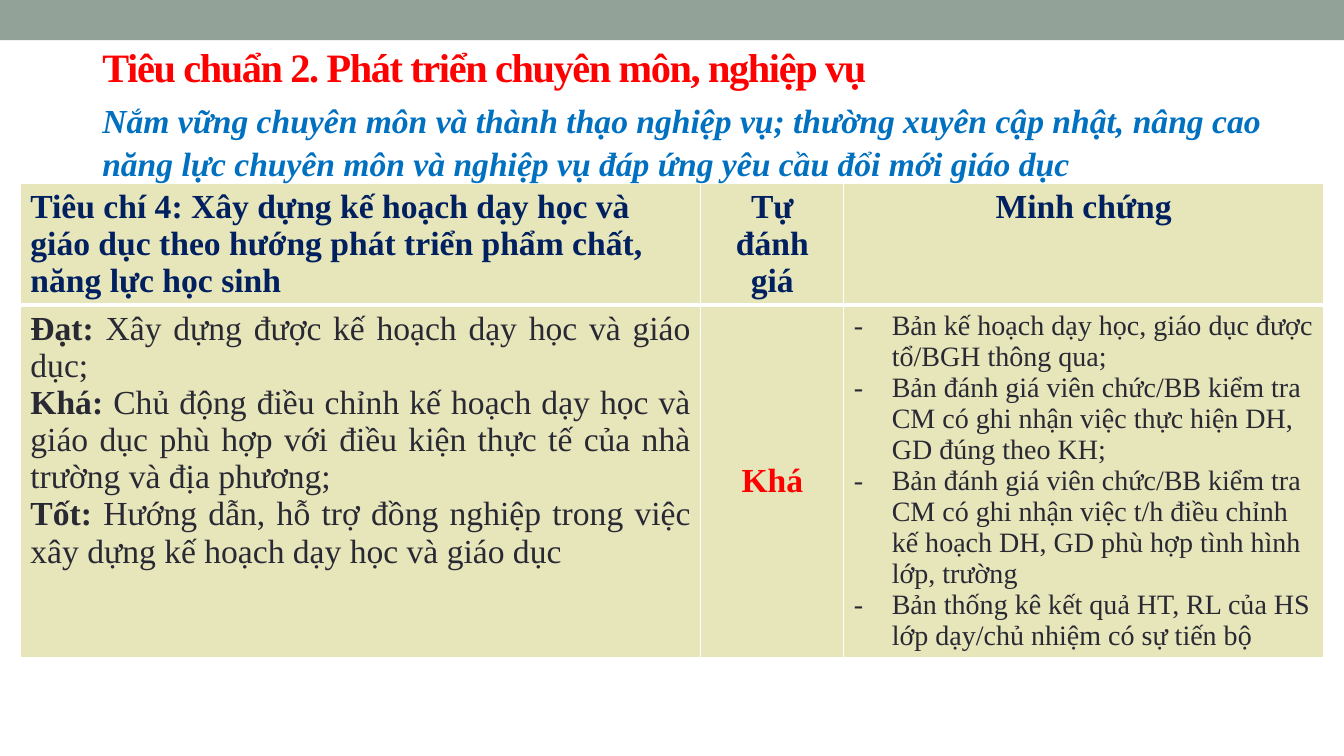
"""Build a slide on teaching criterion 4 with its levels, rating and evidence."""
from lxml.etree import SubElement
from pptx import Presentation
from pptx.dml.color import RGBColor
from pptx.enum.shapes import MSO_SHAPE
from pptx.enum.text import MSO_ANCHOR, PP_ALIGN
from pptx.oxml.ns import qn
from pptx.util import Pt

FONT = "Times New Roman"
NAVY, INK, RED, BLUE = "002060", "292934", "FF0000", "0070C0"
SAGE, CREAM, WHITE = "93A299", "E7E5BA", "FFFFFF"

CRITERION = ("Tiêu chí 4: Xây dựng kế hoạch dạy học và giáo dục theo hướng "
             "phát triển phẩm chất, năng lực học sinh")
LEVELS = [
    ("Đạt: ", "Xây dựng được kế hoạch dạy học và giáo dục;"),
    ("Khá: ", "Chủ động điều chỉnh kế hoạch dạy học và giáo dục phù hợp với "
              "điều kiện thực tế của nhà trường và địa phương;"),
    ("Tốt: ", "Hướng dẫn, hỗ trợ đồng nghiệp trong việc xây dựng kế hoạch "
              "dạy học và giáo dục"),
]
EVIDENCE = [
    "Bản kế hoạch dạy học, giáo dục được tổ/BGH thông qua;",
    "Bản đánh giá viên chức/BB kiểm tra CM có ghi nhận việc thực hiện DH, "
    "GD đúng theo KH;",
    "Bản đánh giá viên chức/BB kiểm tra CM có ghi nhận việc t/h điều chỉnh "
    "kế hoạch DH, GD phù hợp tình hình lớp, trường",
    "Bản thống kê kết quả HT, RL của HS lớp dạy/chủ nhiệm có sự tiến bộ",
]


def rgb(color):
    return RGBColor.from_string(color)


def add_run(p, text, color, size=24, bold=True, italic=False):
    r = p.add_run()
    r.text = text
    font = r.font
    font.name, font.size, font.bold, font.italic = FONT, Pt(size), bold, italic
    font.color.rgb = rgb(color)
    return r


def next_paragraph(tf, index, align=PP_ALIGN.LEFT):
    p = tf.add_paragraph() if index else tf.paragraphs[0]
    p.alignment = align
    return p


def add_bar(slide, width):
    sp = slide.shapes.add_shape(MSO_SHAPE.RECTANGLE, 0, 0, width, Pt(28.8))
    sp.shadow.inherit = False
    sp.fill.solid()
    sp.fill.fore_color.rgb = rgb(SAGE)
    sp.line.fill.background()


def format_title(title, text):
    title.left, title.top, title.width, title.height = Pt(66), Pt(28.8), Pt(829.5), Pt(36.7)
    tf = title.text_frame
    tf.vertical_anchor = MSO_ANCHOR.MIDDLE
    r = add_run(next_paragraph(tf, 0), text, RED, 28.8)
    r.font._element.set("spc", "-100")


def add_subtitle(slide, text):
    tf = slide.shapes.add_textbox(Pt(66), Pt(65.5), Pt(894), Pt(65.5)).text_frame
    tf.word_wrap = True
    p = next_paragraph(tf, 0)
    p.line_spacing = 1.07
    add_run(p, text, BLUE, italic=True)


def style_cell(cell, bottom_width):
    tc_pr = cell._tc.get_or_add_tcPr()
    for side, width in zip("LRTB", (1, 1, 1, bottom_width)):
        ln = SubElement(tc_pr, qn(f"a:ln{side}"), w=str(Pt(width)))
        SubElement(SubElement(ln, qn("a:solidFill")), qn("a:srgbClr"), val=WHITE)
    cell.fill.solid()
    cell.fill.fore_color.rgb = rgb(CREAM)


def add_criteria_table(slide):
    table = slide.shapes.add_table(2, 3, Pt(14.5), Pt(131), Pt(931), Pt(338)).table
    table.first_row = table.horz_banding = False
    for column, width in zip(table.columns, (486, 102.3, 342.7)):
        column.width = Pt(width)
    for row, height, bottom_width in zip(table.rows, (87, 251), (3, 1)):
        row.height = Pt(height)
        for cell in row.cells:
            style_cell(cell, bottom_width)
    return table


def fill_header(table):
    add_run(next_paragraph(table.cell(0, 0).text_frame, 0), CRITERION, NAVY)
    tf = table.cell(0, 1).text_frame
    add_run(next_paragraph(tf, 0, PP_ALIGN.CENTER), "Tự", NAVY)
    p = next_paragraph(tf, 1, PP_ALIGN.CENTER)
    add_run(p, "đánh", NAVY)
    p.add_line_break()
    add_run(p, "giá", NAVY)
    p = next_paragraph(table.cell(0, 2).text_frame, 0, PP_ALIGN.CENTER)
    add_run(p, "Minh chứng", NAVY)


def fill_levels(cell):
    for i, (level, description) in enumerate(LEVELS):
        p = next_paragraph(cell.text_frame, i, PP_ALIGN.JUSTIFY)
        add_run(p, level, INK)
        add_run(p, description, INK, bold=False)


def fill_rating(cell, rating):
    cell.vertical_anchor = MSO_ANCHOR.MIDDLE
    add_run(next_paragraph(cell.text_frame, 0, PP_ALIGN.CENTER), rating, RED)


def fill_evidence(cell):
    for i, item in enumerate(EVIDENCE):
        p = next_paragraph(cell.text_frame, i)
        p_pr = p._p.get_or_add_pPr()
        p_pr.set("marL", str(Pt(27)))
        p_pr.set("indent", str(-Pt(27)))
        SubElement(p_pr, qn("a:buFont"), typeface=FONT)
        SubElement(p_pr, qn("a:buChar"), char="-")
        add_run(p, item, INK, 20, bold=False)


def main():
    prs = Presentation()
    prs.slide_width, prs.slide_height = Pt(960), Pt(540)
    slide = prs.slides.add_slide(prs.slide_layouts[5])
    add_bar(slide, prs.slide_width)
    format_title(slide.shapes.title, "Tiêu chuẩn 2. Phát triển chuyên môn, nghiệp vụ")
    table = add_criteria_table(slide)
    fill_header(table)
    fill_levels(table.cell(1, 0))
    fill_rating(table.cell(1, 1), "Khá")
    fill_evidence(table.cell(1, 2))
    add_subtitle(slide, "Nắm vững chuyên môn và thành thạo nghiệp vụ; thường xuyên "
                        "cập nhật, nâng cao năng lực chuyên môn và nghiệp vụ đáp ứng "
                        "yêu cầu đổi mới giáo dục")
    prs.save("out.pptx")


if __name__ == "__main__":
    main()
